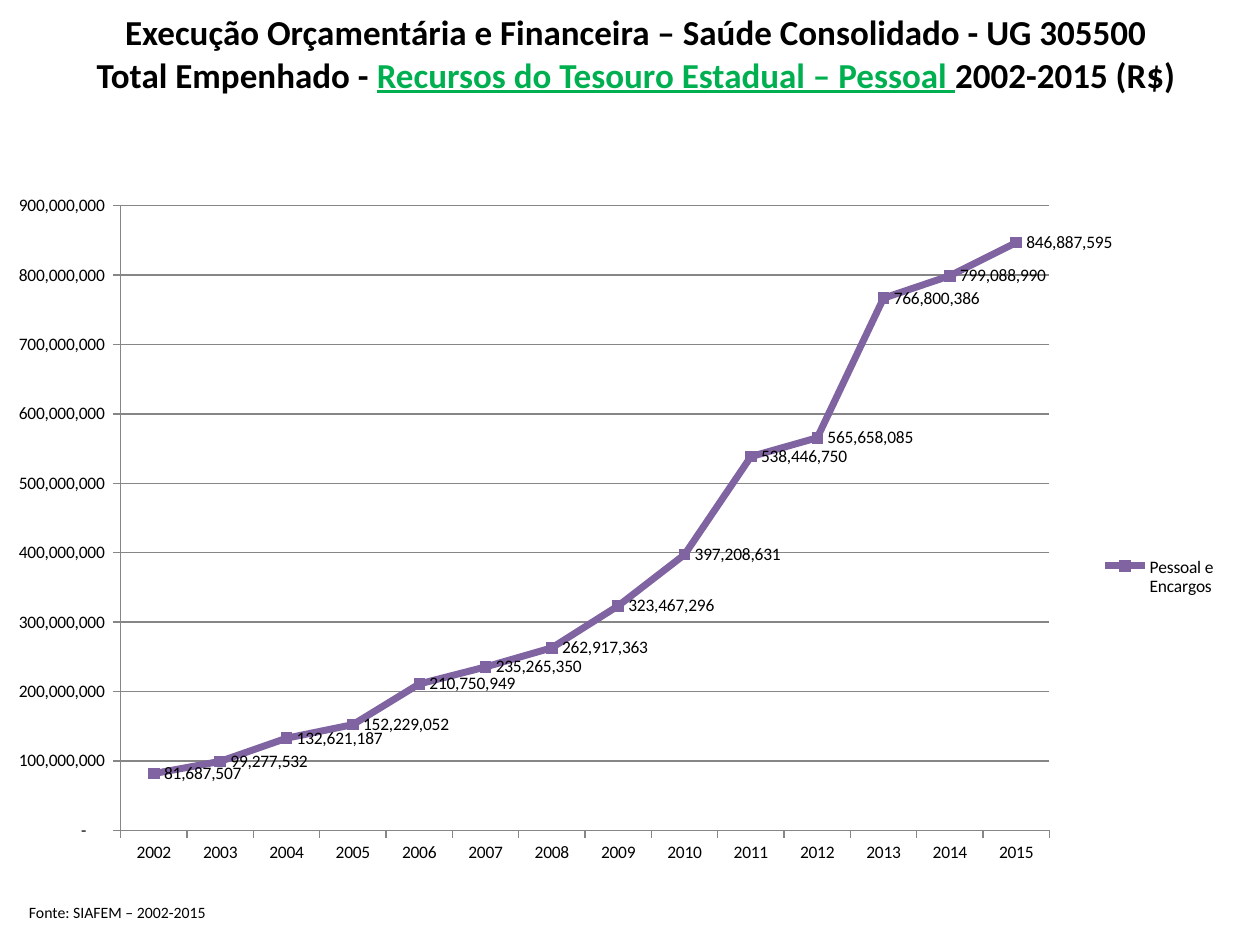
from lxml import etree
from pptx import Presentation
from pptx import util as u
from pptx.chart import data as chart_data
from pptx.dml.color import RGBColor
from pptx.enum import chart as c
from pptx.enum import text as t
from pptx.oxml import ns

THEME = {
    "font": "Calibri",
    "ink": RGBColor(0, 0, 0),
    "accent": RGBColor(0x00, 0xB0, 0x50),
    "series": RGBColor(0x80, 0x64, 0xA2),
    "grid": RGBColor(0x86, 0x86, 0x86),
    "title_size": u.Pt(20),
    "chart_size": u.Pt(10),
    "source_size": u.Pt(9),
}
EMU_PER_INCH, PX_PER_INCH = 914400, 126


def px(*lengths):
    return [u.Emu(round(n * EMU_PER_INCH / PX_PER_INCH)) for n in lengths]


def set_layout(parent, position, **values):
    """Place a chart part by fractions of the chart area."""
    for old in parent.findall(ns.qn("c:layout")):
        parent.remove(old)
    layout = etree.Element(ns.qn("c:layout"))
    manual = etree.SubElement(layout, ns.qn("c:manualLayout"))
    for tag, value in values.items():
        etree.SubElement(manual, ns.qn("c:" + tag)).set("val", str(value))
    parent.insert(position, layout)


prs = Presentation()
prs.slide_width, prs.slide_height = px(1260, 945)
slide = prs.slides.add_slide(prs.slide_layouts[5])

# Title
title = slide.shapes.title
title.left, title.top, title.width, title.height = px(69, 0, 1134, 106)
title.text_frame.vertical_anchor = t.MSO_ANCHOR.MIDDLE
heading = title.text_frame.paragraphs[0]
heading.alignment = t.PP_ALIGN.CENTER
heading_runs = [
    ("Execução Orçamentária e Financeira – Saúde Consolidado - UG 305500", False),
    (None, False),
    ("Total Empenhado - ", False),
    ("Recursos do Tesouro Estadual – Pessoal ", True),
    ("2002-2015 (R$)", False),
]
for words, highlighted in heading_runs:
    if words is None:
        heading.add_line_break()
        continue
    run = heading.add_run()
    run.text = words
    run.font.name, run.font.size = THEME["font"], THEME["title_size"]
    run.font.bold, run.font.underline = True, highlighted
    run.font.color.rgb = THEME["accent" if highlighted else "ink"]

# Spending chart
spending = chart_data.CategoryChartData(number_format="#,##0")
spending.categories = [str(year) for year in range(2002, 2016)]
spending.add_series("Pessoal e Encargos", [
    81687507, 99277532, 132621187, 152229052, 210750949, 235265350, 262917363,
    323467296, 397208631, 538446750, 565658085, 766800386, 799088990, 846887595,
])
chart = slide.shapes.add_chart(
    c.XL_CHART_TYPE.LINE_MARKERS, *px(15, 185, 1230, 694), spending).chart
chart.has_title = False
chart.font.name, chart.font.size = THEME["font"], THEME["chart_size"]
chart.font.color.rgb = THEME["ink"]
set_layout(chart.plots[0]._element.getparent(), 0, layoutTarget="inner",
           xMode="edge", yMode="edge", x=0.08, y=0.03, w=0.76, h=0.9)

# Axes
years, amounts = chart.category_axis, chart.value_axis
amounts.minimum_scale, amounts.maximum_scale = 0, 900_000_000
amounts.major_unit = 100_000_000
amounts.has_major_gridlines = True
amounts.tick_labels.number_format = '_(* #,##0_);_(* \\(#,##0\\);_(* "-"??_);_('
amounts.tick_labels.number_format_is_linked = False
for axis in (years, amounts):
    axis.major_tick_mark = c.XL_TICK_MARK.OUTSIDE
    axis.minor_tick_mark = c.XL_TICK_MARK.NONE
for line in (years.format.line, amounts.format.line, amounts.major_gridlines.format.line):
    line.color.rgb, line.width = THEME["grid"], u.Pt(0.75)

# Line, markers and value labels
chart.plots[0].vary_by_categories = False
staff = chart.plots[0].series[0]
staff.smooth = False
staff.format.line.color.rgb, staff.format.line.width = THEME["series"], u.Pt(4)
staff.marker.style, staff.marker.size = c.XL_MARKER_STYLE.SQUARE, 6
staff.marker.format.fill.solid()
staff.marker.format.fill.fore_color.rgb = THEME["series"]
staff.marker.format.line.color.rgb = THEME["series"]
labels = staff.data_labels
labels.show_value = True
labels.position = c.XL_LABEL_POSITION.RIGHT
labels.number_format, labels.number_format_is_linked = "#,##0", False

# Legend
chart.has_legend = True
chart.legend.position = c.XL_LEGEND_POSITION.RIGHT
chart.legend.include_in_layout = False
set_layout(chart.legend._element, 1, xMode="edge", yMode="edge",
           x=0.87, y=0.53, w=0.12, h=0.07)

# Source note
source = slide.shapes.add_textbox(*px(10, 897, 402, 32)).text_frame
source.word_wrap = True
source.margin_left, = px(19)
run = source.paragraphs[0].add_run()
run.text = "Fonte: SIAFEM – 2002-2015"
run.font.name, run.font.size = THEME["font"], THEME["source_size"]
run.font.color.rgb = THEME["ink"]

prs.save("out.pptx")
